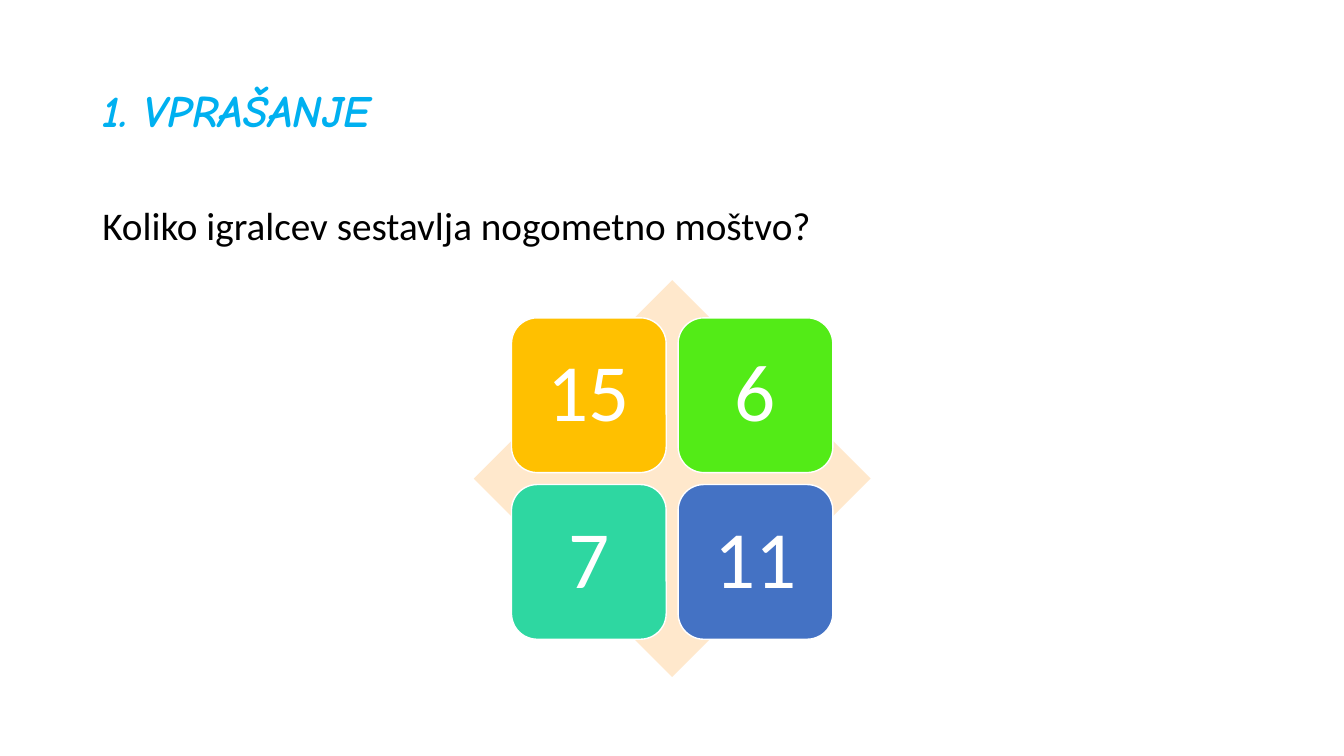
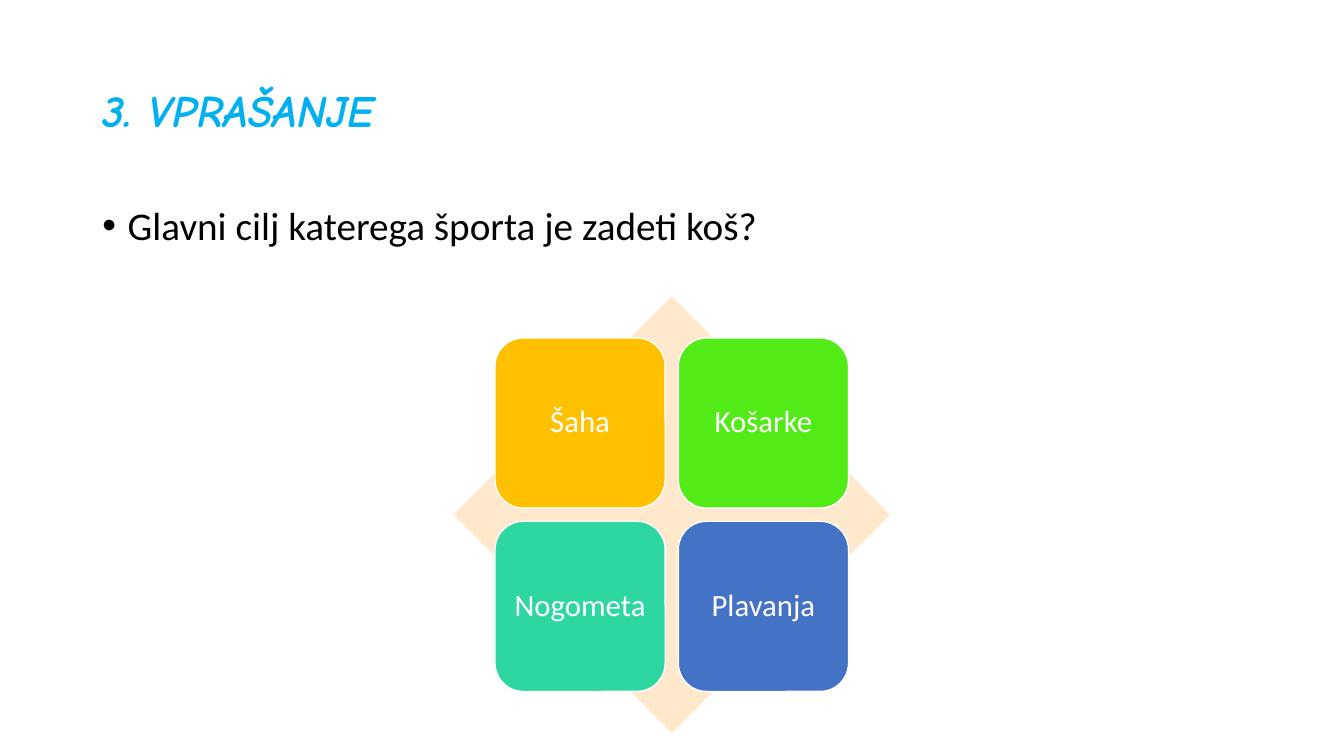
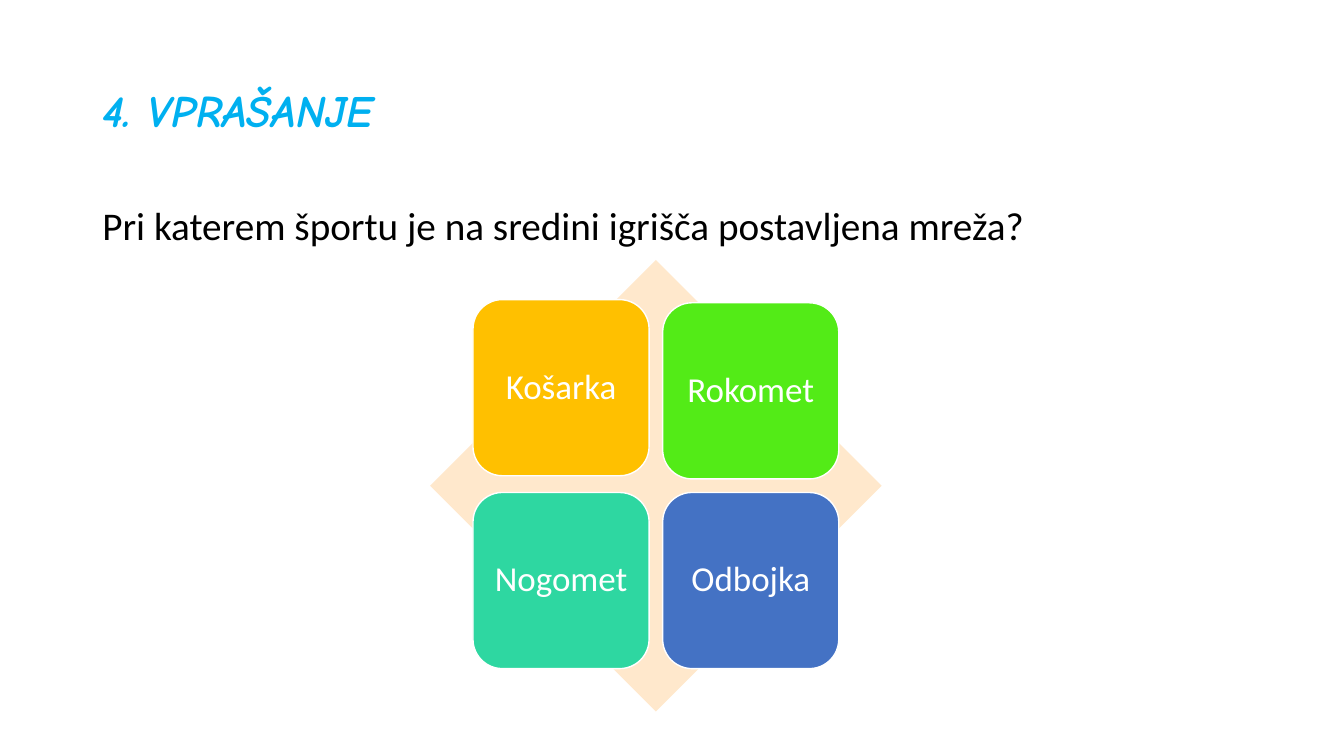
"""Build three quiz slides, each with a question and four answer tiles on a diamond."""
import pptx
import pptx.dml.color
import pptx.enum.shapes
import pptx.enum.text
import pptx.oxml.ns
import pptx.util
from lxml import etree

Cm, Pt = pptx.util.Cm, pptx.util.Pt
SHAPE = pptx.enum.shapes.MSO_SHAPE
ALIGN = pptx.enum.text.PP_ALIGN
ANCHOR = pptx.enum.text.MSO_ANCHOR

QUESTIONS = [
    {"title": "1. VPRAŠANJE",
     "question": "Koliko igralcev sestavlja nogometno moštvo?", "bullet": False,
     "answers": ["15", "6", "7", "11"], "size": 58,
     "diamond": (11.94, 7.06, 10), "first_lift": 0},
    {"title": "3. VPRAŠANJE",
     "question": "Glavni cilj katerega športa je zadeti koš?", "bullet": True,
     "answers": ["Šaha", "Košarke", "Nogometa", "Plavanja"], "size": 22,
     "diamond": (11.43, 7.47, 11), "first_lift": 0},
    {"title": "4. VPRAŠANJE",
     "question": "Pri katerem športu je na sredini igrišča postavljena mreža?", "bullet": False,
     "answers": ["Košarka", "Rokomet", "Nogomet", "Odbojka"], "size": 25,
     "diamond": (10.84, 6.55, 11.38), "first_lift": 0.08},
]

COLOURS = {"title": "00B0F0", "text": "000000", "white": "FFFFFF", "diamond": "FFE8CC"}
TILE_COLOURS = ["FFC000", "53EB17", "2ED7A1", "4472C4"]
TITLE_FONT, BODY_FONT = "Comic Neue", "Calibri"
TEXT_LEFT, TEXT_WIDTH = 2.33, 29.21
TILE_SHARE, GAP_SHARE = 0.39, 0.03
MARGIN_SHARE = (1 - 2 * TILE_SHARE - GAP_SHARE) / 2
INSET_SHARE = 0.3


def rgb(value):
    return pptx.dml.color.RGBColor.from_string(value)


def write(shape, text, size, colour, font=BODY_FONT):
    shape.text_frame.word_wrap = True
    para = shape.text_frame.paragraphs[0]
    para.text = text
    para.line_spacing = 0.9
    para.font.name = font
    para.font.size = Pt(size)
    para.font.color.rgb = rgb(colour)
    return para


def add_text(page, top, height, *style):
    box = page.shapes.add_textbox(Cm(TEXT_LEFT), Cm(top), Cm(TEXT_WIDTH), Cm(height))
    return box, write(box, *style)


def add_bullet(para):
    properties = para._p.get_or_add_pPr()
    properties.set("marL", str(Cm(0.64)))
    properties.set("indent", str(-Cm(0.64)))
    for tag, name, value in [("a:buFont", "typeface", "Arial"), ("a:buChar", "char", "•")]:
        etree.SubElement(properties, pptx.oxml.ns.qn(tag)).set(name, value)


def add_square(shapes, kind, left, top, side, colour):
    square = shapes.add_shape(kind, Cm(left), Cm(top), Cm(side), Cm(side))
    square.shadow.inherit = False
    square.fill.solid()
    square.fill.fore_color.rgb = rgb(colour)
    square.line.fill.background()
    return square


def add_tile(shapes, left, top, side, colour, answer, size):
    tile = add_square(shapes, SHAPE.ROUNDED_RECTANGLE, left, top, side, colour)
    tile.line.color.rgb = rgb(COLOURS["white"])
    tile.line.width = Pt(1)
    frame = tile.text_frame
    inset = Pt(INSET_SHARE * size)
    frame.margin_left = frame.margin_right = inset
    frame.margin_top = frame.margin_bottom = inset
    frame.vertical_anchor = ANCHOR.MIDDLE
    write(tile, answer, size, COLOURS["white"]).alignment = ALIGN.CENTER


def add_answers(page, item):
    left, top, side = item["diamond"]
    group = page.shapes.add_group_shape()
    add_square(group.shapes, SHAPE.DIAMOND, left, top, side, COLOURS["diamond"])
    for index, (answer, colour) in enumerate(zip(item["answers"], TILE_COLOURS)):
        row, column = divmod(index, 2)
        offsets = [side * (MARGIN_SHARE + step * (TILE_SHARE + GAP_SHARE))
                   for step in (column, row)]
        lift = item["first_lift"] if index == 0 else 0
        add_tile(group.shapes, left + offsets[0], top + offsets[1] - lift,
                 side * TILE_SHARE, colour, answer, item["size"])


def add_question(deck, item):
    page = deck.slides.add_slide(deck.slide_layouts[6])
    box, para = add_text(page, 1.01, 3.68, item["title"], 32, COLOURS["title"], TITLE_FONT)
    box.text_frame.vertical_anchor = ANCHOR.MIDDLE
    para.font.bold = para.font.italic = True
    box, para = add_text(page, 5.07, 12.09, item["question"], 28, COLOURS["text"])
    para.space_before = Pt(10)
    if item["bullet"]:
        add_bullet(para)
    add_answers(page, item)


def main():
    deck = pptx.Presentation()
    deck.slide_width, deck.slide_height = Cm(33.87), Cm(19.05)
    for item in QUESTIONS:
        add_question(deck, item)
    deck.save("out.pptx")


if __name__ == "__main__":
    main()
